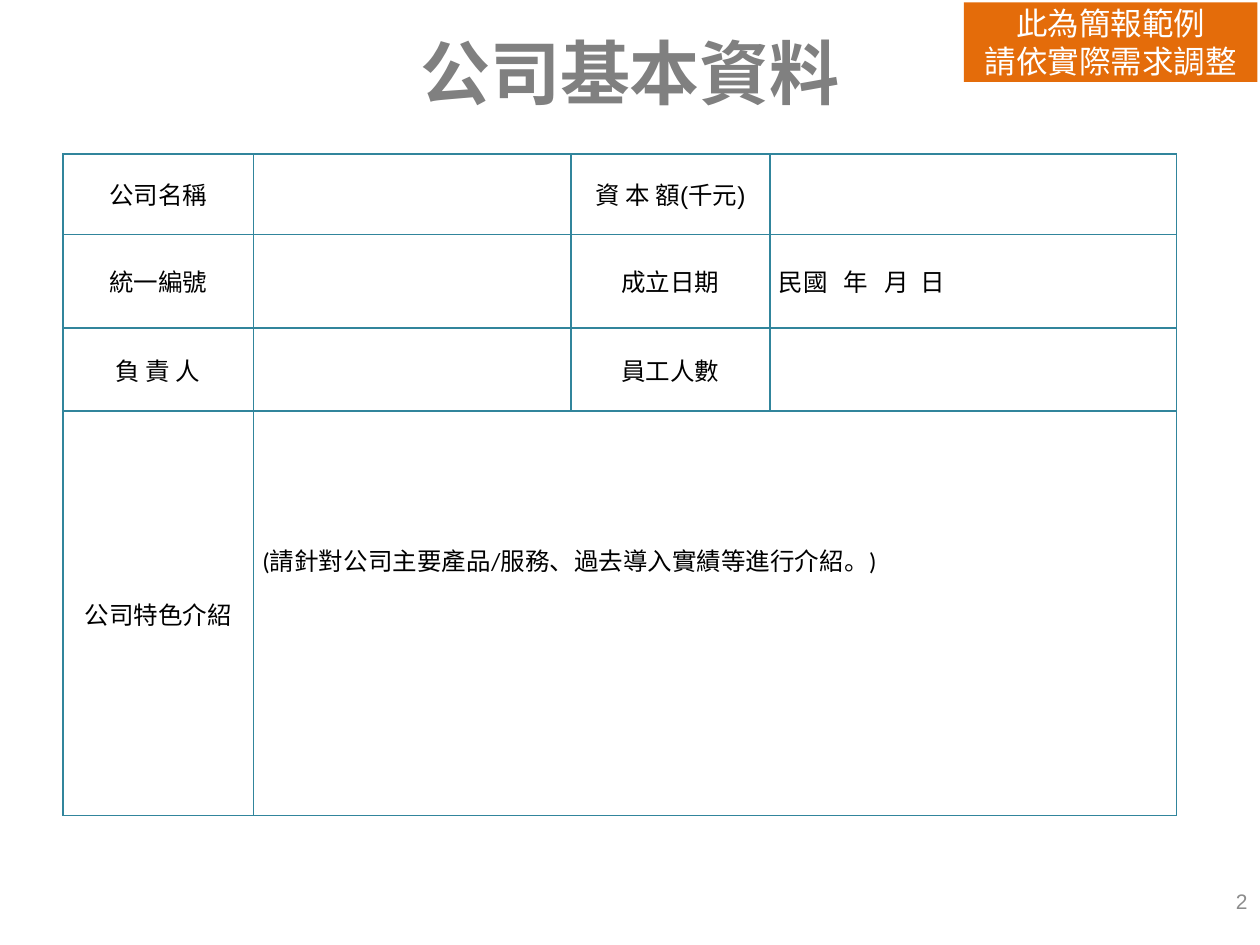
import lxml.etree
import pptx
import pptx.dml.color
import pptx.enum.shapes
import pptx.enum.text
import pptx.oxml.ns
import pptx.util

Cm = pptx.util.Cm
Pt = pptx.util.Pt
RGBColor = pptx.dml.color.RGBColor
ALIGN = pptx.enum.text.PP_ALIGN
MIDDLE = pptx.enum.text.MSO_ANCHOR.MIDDLE
qn = pptx.oxml.ns.qn

WHITE = RGBColor(0xFF, 0xFF, 0xFF)
BLACK = RGBColor(0x00, 0x00, 0x00)
TITLE_GREY = RGBColor(0x80, 0x80, 0x80)
NUMBER_GREY = RGBColor(0x8C, 0x8C, 0x8C)
ORANGE = RGBColor(0xE4, 0x6C, 0x0A)
TEAL = RGBColor(0x31, 0x85, 0x9C)
CJK = "Noto Sans CJK SC"


def write(paragraph, text, color, font_format, paragraph_format):
    run = paragraph.add_run()
    run.text = text
    for key, value in font_format.items():
        setattr(run.font, key, value)
    run.font.color.rgb = color
    east_asian = lxml.etree.SubElement(run.font._element, qn("a:ea"))
    east_asian.set("typeface", CJK)
    for key, value in paragraph_format.items():
        setattr(paragraph, key, value)


def draw_borders(cell):
    properties = cell._tc.get_or_add_tcPr()
    for side in ("a:lnL", "a:lnR", "a:lnT", "a:lnB"):
        line = lxml.etree.SubElement(properties, qn(side), w=str(Pt(1)))
        fill = lxml.etree.SubElement(line, qn("a:solidFill"))
        lxml.etree.SubElement(fill, qn("a:srgbClr"), val=str(TEAL))


deck = pptx.Presentation()
deck.slide_width = Cm(25.4)
deck.slide_height = Cm(19.05)
slide = deck.slides.add_slide(deck.slide_layouts[6])

title = slide.shapes.add_textbox(Cm(1.27), Cm(0.76), Cm(22.86), Cm(1.37))
page_number = slide.shapes.add_textbox(Cm(19.48), Cm(17.65), Cm(5.92), Cm(1.02))
for box, text, color, font_format, align in (
    (title, "公司基本資料", TITLE_GREY,
     {"name": CJK, "size": Pt(40), "bold": True}, ALIGN.CENTER),
    (page_number, "2", NUMBER_GREY,
     {"name": "Arial", "size": Pt(12)}, ALIGN.RIGHT),
):
    box.text_frame.word_wrap = True
    box.text_frame.vertical_anchor = MIDDLE
    write(box.text_frame.paragraphs[0], text, color, font_format, {"alignment": align})

column_widths = (3.84, 6.4, 4.01, 8.2)
row_heights = (1.63, 1.88, 1.68, 8.15)
company = slide.shapes.add_table(
    len(row_heights), len(column_widths), Cm(1.27), Cm(3.1),
    Cm(sum(column_widths)), Cm(sum(row_heights)),
).table
for column, width in zip(company.columns, column_widths):
    column.width = Cm(width)
for row, height in zip(company.rows, row_heights):
    row.height = Cm(height)

entries = (
    ("公司名稱", "", "資 本 額(千元)", ""),
    ("統一編號", "", "成立日期", "民國\t年\t月\t日"),
    ("負 責 人", "", "員工人數", ""),
    ("公司特色介紹", "(請針對公司主要產品/服務、過去導入實績等進行介紹。)", "", ""),
)
cell_format = {
    "vertical_anchor": MIDDLE, "margin_left": Cm(0.18), "margin_right": Cm(0.18),
    "margin_top": 0, "margin_bottom": 0,
}
for row_index, row_entries in enumerate(entries):
    for column_index, entry in enumerate(row_entries):
        cell = company.cell(row_index, column_index)
        draw_borders(cell)
        cell.fill.background()
        for key, value in cell_format.items():
            setattr(cell, key, value)
        if entry:
            is_label = column_index % 2 == 0
            write(
                cell.text_frame.paragraphs[0], entry, BLACK,
                {"name": "Calibri" if entry.startswith("(") else "Arial", "size": Pt(14)},
                {"alignment": ALIGN.CENTER if is_label else ALIGN.JUSTIFY,
                 "space_before": Pt(2.4), "space_after": Pt(2.4)},
            )

introduction = company.cell(3, 1)
introduction.merge(company.cell(3, 3))
introduction.margin_bottom = Cm(2.18)

founding_date = company.cell(1, 3).text_frame.paragraphs[0]
founding_date.alignment = ALIGN.LEFT
tab_stops = lxml.etree.SubElement(founding_date._p.get_or_add_pPr(), qn("a:tabLst"))
for position in (1.31, 2.14, 2.86):
    lxml.etree.SubElement(tab_stops, qn("a:tab"), pos=str(Cm(position)), algn="l")

notice = slide.shapes.add_shape(
    pptx.enum.shapes.MSO_SHAPE.RECTANGLE, Cm(19.43), Cm(0.05), Cm(5.92), Cm(1.6)
)
notice.shadow.inherit = False
notice.fill.solid()
notice.fill.fore_color.rgb = ORANGE
notice.line.fill.background()
notice.text_frame.word_wrap = True
notice.text_frame.vertical_anchor = MIDDLE
for index, text in enumerate(("此為簡報範例", "請依實際需求調整")):
    paragraph = notice.text_frame.add_paragraph() if index else notice.text_frame.paragraphs[0]
    write(paragraph, text, WHITE, {"name": "Arial", "size": Pt(18)},
          {"alignment": ALIGN.CENTER, "line_spacing": Pt(21.7)})

deck.save("out.pptx")
